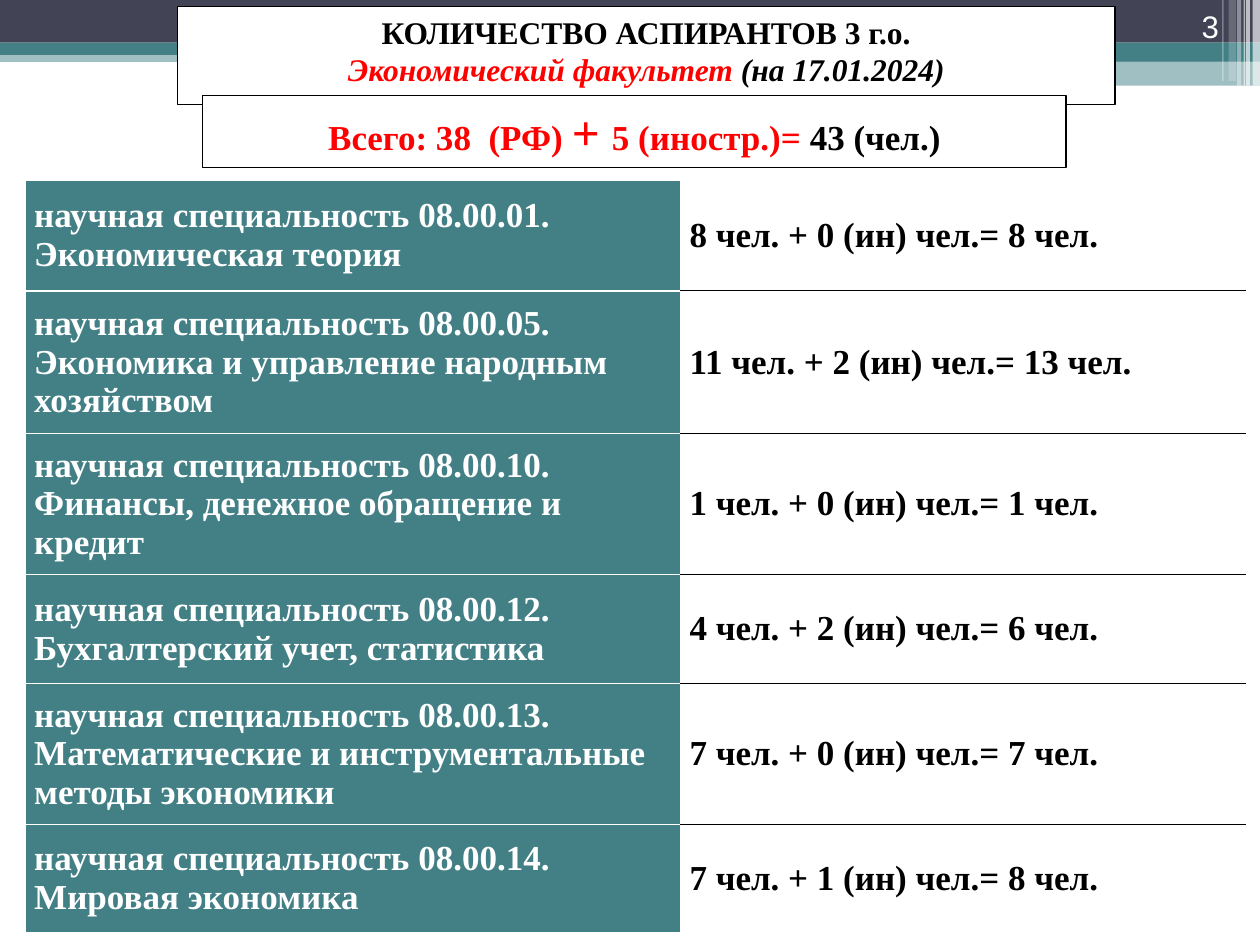
"""Build the slide on postgraduate numbers at the faculty of economics."""
from dataclasses import dataclass

from lxml import etree
from pptx import Presentation
from pptx.dml.color import RGBColor
from pptx.enum.shapes import MSO_SHAPE
from pptx.enum.text import MSO_ANCHOR, PP_ALIGN
from pptx.oxml.ns import qn
from pptx.util import Cm, Pt

RECTANGLE = MSO_SHAPE.RECTANGLE
TOP, MIDDLE, BOTTOM = MSO_ANCHOR.TOP, MSO_ANCHOR.MIDDLE, MSO_ANCHOR.BOTTOM
LEFT, CENTER, RIGHT = PP_ALIGN.LEFT, PP_ALIGN.CENTER, PP_ALIGN.RIGHT

WHITE = RGBColor(0xFF, 0xFF, 0xFF)
BLACK = RGBColor(0x00, 0x00, 0x00)
RED = RGBColor(0xFF, 0x00, 0x00)
TEAL = RGBColor(0x43, 0x80, 0x86)
SLATE = RGBColor(0x42, 0x44, 0x56)

SERIF, SANS = "Times New Roman", "Arial"
THIN, THICK = 0.45, 1.47


@dataclass(frozen=True)
class Band:
    left: float
    top: float
    width: float
    height: float
    color: RGBColor
    opacity: int = 100


@dataclass(frozen=True)
class Run:
    text: str
    size: float
    color: RGBColor
    bold: bool = True
    italic: bool = False
    font: str = SERIF


@dataclass(frozen=True)
class Specialty:
    name: str
    count: str
    height: float


BANDS = [
    Band(0, 1.02, 25.4, 0.23, TEAL, 50),
    Band(0, 0, 25.4, 0.86, SLATE),
    Band(0, 0.86, 25.4, 0.25, TEAL),
    Band(15.04, 0.99, 10.36, 0.25, TEAL),
    Band(15.04, 1.22, 10.36, 0.51, TEAL, 50),
    Band(25.25, 0, 0.15, 1.73, WHITE, 65),
    Band(25.12, 0, 0.08, 1.73, WHITE, 65),
    Band(25.07, 0, 0.03, 1.73, WHITE, 60),
    Band(24.94, 0, 0.08, 1.73, WHITE, 40),
    Band(24.77, 0, 0.15, 1.63, WHITE, 20),
    Band(24.64, 0, 0.03, 1.63, WHITE, 30),
]

HEADING = [
    [Run("КОЛИЧЕСТВО АСПИРАНТОВ 3 г.о.", 18, BLACK)],
    [
        Run("Экономический факультет ", 18, RED, italic=True),
        Run("(на 17.01.2024)", 18, BLACK, italic=True),
    ],
]
TOTAL = [[
    Run("Всего: 38  (РФ) ", 20, RED),
    Run("+ ", 28, RED),
    Run("5 (иностр.)= ", 20, RED),
    Run("43 (чел.)", 20, BLACK),
]]
PAGE_NUMBER = [[Run("3", 17.8, WHITE, bold=False, font=SANS)]]

SPECIALTIES = [
    Specialty("08.00.01. Экономическая теория", "8 чел. + 0 (ин) чел.= 8 чел.", 2.23),
    Specialty("08.00.05. Экономика и управление народным хозяйством",
              "11 чел. + 2 (ин) чел.= 13 чел.", 2.88),
    Specialty("08.00.10. Финансы, денежное обращение и кредит",
              "1 чел. + 0 (ин) чел.= 1 чел.", 2.84),
    Specialty("08.00.12. Бухгалтерский учет, статистика",
              "4 чел. + 2 (ин) чел.= 6 чел.", 2.2),
    Specialty("08.00.13. Математические и инструментальные методы экономики",
              "7 чел. + 0 (ин) чел.= 7 чел.", 2.84),
    Specialty("08.00.14. Мировая экономика", "7 чел. + 1 (ин) чел.= 8 чел.", 2.18),
]
COLUMN_WIDTHS = (13.21, 11.4)


def write(frame, paragraphs: list[list[Run]], align: PP_ALIGN) -> None:
    """Fill a text frame run by run."""
    frame.word_wrap = True
    for index, runs in enumerate(paragraphs):
        paragraph = frame.add_paragraph() if index else frame.paragraphs[0]
        paragraph.alignment = align
        for item in runs:
            run = paragraph.add_run()
            run.text = item.text
            run.font.name = item.font
            run.font.size = Pt(item.size)
            run.font.bold = item.bold
            run.font.italic = item.italic
            run.font.color.rgb = item.color


def add_band(slide, band: Band):
    """Draw one filled rectangle without outline and return it."""
    shape = slide.shapes.add_shape(
        RECTANGLE, Cm(band.left), Cm(band.top), Cm(band.width), Cm(band.height))
    shape.shadow.inherit = False
    shape.line.fill.background()
    shape.fill.solid()
    shape.fill.fore_color.rgb = band.color
    if band.opacity < 100:
        color = shape.fill._xPr.find(qn("a:solidFill"))[0]
        etree.SubElement(color, qn("a:alpha"), val=str(band.opacity * 1000))
    return shape


def add_framed_text(slide, band: Band, paragraphs: list[list[Run]]) -> None:
    """Draw an outlined box with centred text."""
    box = add_band(slide, band)
    box.line.color.rgb = BLACK
    box.line.width = Pt(0.75)
    box.text_frame.vertical_anchor = TOP
    write(box.text_frame, paragraphs, CENTER)


def add_border(cell, side: str, color: RGBColor, width: float) -> None:
    """Append one border to a cell; sides go in the order L, R, T, B."""
    properties = cell._tc.get_or_add_tcPr()
    line = etree.SubElement(properties, qn(f"a:ln{side}"), w=str(Pt(width)))
    fill = etree.SubElement(line, qn("a:solidFill"))
    etree.SubElement(fill, qn("a:srgbClr"), val=str(color))


def style_cell(cell, text: str, ink: RGBColor, fill: RGBColor,
               top: tuple[RGBColor, float], bottom: tuple[RGBColor, float]) -> None:
    """Set borders, fill and text of a cell."""
    edge = (WHITE, THIN)
    for side, border in zip("LRTB", (edge, edge, top, bottom)):
        add_border(cell, side, *border)
    cell.fill.solid()
    cell.fill.fore_color.rgb = fill
    cell.vertical_anchor = MIDDLE
    cell.margin_left = cell.margin_right = Cm(0.18)
    cell.margin_top = cell.margin_bottom = Cm(0.13)
    write(cell.text_frame, [[Run(text, 20, ink)]], LEFT)


def add_specialty_table(slide) -> None:
    """Draw the table of specialties and head counts."""
    height = sum(specialty.height for specialty in SPECIALTIES)
    table = slide.shapes.add_table(
        len(SPECIALTIES), len(COLUMN_WIDTHS), Cm(0.51), Cm(3.63),
        Cm(sum(COLUMN_WIDTHS)), Cm(height)).table
    table.first_row = table.horz_banding = False
    for column, width in zip(table.columns, COLUMN_WIDTHS):
        column.width = Cm(width)
    last = len(SPECIALTIES) - 1
    for index, specialty in enumerate(SPECIALTIES):
        table.rows[index].height = Cm(specialty.height)
        style_cell(table.cell(index, 0), f"научная специальность {specialty.name}",
                   WHITE, TEAL,
                   (WHITE, THICK if index == 1 else THIN),
                   (WHITE, THICK if index == 0 else THIN))
        style_cell(table.cell(index, 1), specialty.count, BLACK, WHITE,
                   (WHITE if index == 0 else BLACK, THIN),
                   (WHITE if index == last else BLACK, THIN))


def main() -> None:
    """Assemble and save the presentation."""
    deck = Presentation()
    deck.slide_width, deck.slide_height = Cm(25.4), Cm(19.05)
    slide = deck.slides.add_slide(deck.slide_layouts[6])
    for band in BANDS:
        add_band(slide, band)
    add_framed_text(slide, Band(3.58, 0.13, 18.9, 1.98, WHITE), HEADING)
    add_specialty_table(slide)
    add_framed_text(slide, Band(4.09, 1.93, 17.4, 1.45, WHITE), TOTAL)
    page_number = slide.shapes.add_textbox(Cm(22.71), Cm(0), Cm(2.11), Cm(1.02))
    page_number.text_frame.vertical_anchor = BOTTOM
    write(page_number.text_frame, PAGE_NUMBER, RIGHT)
    deck.save("out.pptx")


if __name__ == "__main__":
    main()
